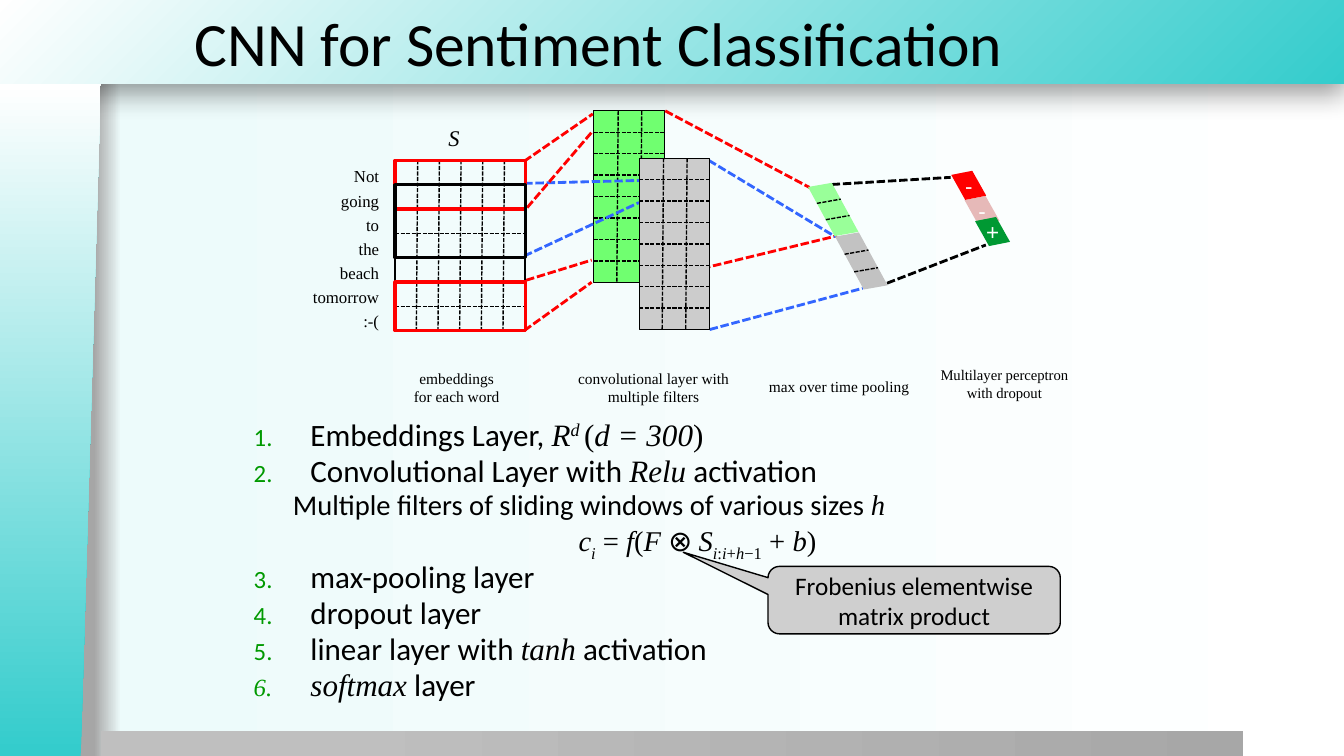
import pptx
import pptx.util
import pptx.dml.color
import pptx.enum.dml
import pptx.enum.shapes
import pptx.enum.text
import pptx.oxml
import pptx.oxml.ns

Pt = pptx.util.Pt
qn = pptx.oxml.ns.qn
MSO = pptx.enum.shapes.MSO_SHAPE
ALIGN = pptx.enum.text.PP_ALIGN
MIDDLE = pptx.enum.text.MSO_ANCHOR.MIDDLE
NS = pptx.oxml.ns.nsdecls("a")

RED, BLUE, BLACK, WHITE = "FF0000", "3366FF", "000000", "FFFFFF"
SERIF, SANS = "Times New Roman", "Calibri"
TITLE = "CNN for Sentiment Classification"
WORDS = ["Not", "going", "to", "the", "beach", "tomorrow", ":-("]
CAPTIONS = [
    (396.7, 259.9, 140.4, 11, ["convolutional layer with", "multiple filters"]),
    (659.5, 257.8, 115.9, 10.5, ["Multilayer perceptron", "with dropout"]),
    (283.7, 259.9, 85, 11, ["embeddings", "for each word"]),
    (537.8, 265.7, 123.1, 11, ["max over time pooling"]),
]
EMBEDDING = (282.2, 114.5, 92.9, 121.7)
FRAMES = [(5, 2, RED), (0, 2, RED), (1, 3, BLACK)]
GREEN_FILTER = (424.1, 79.2, 50.4, 122.4)
GREY_FILTER = (456.5, 113, 50.4, 122.4)
LINKS = [
    (RED, 470.2, 199.4, 597.6, 168.5), (RED, 374.4, 236.2, 422.6, 201.6),
    (BLUE, 374.4, 182.9, 456.5, 144.7), (BLUE, 374.4, 131, 456.5, 128.9),
    (RED, 375.8, 200.2, 422.6, 185.8), (RED, 376.6, 148.3, 423.4, 93.6),
    (RED, 374.4, 115.2, 423.4, 81.4), (RED, 475.2, 79.2, 578.2, 133.9),
    (BLUE, 506.9, 235.4, 616.3, 205.9), (BLUE, 506.2, 114.5, 596.9, 169.2),
    (BLACK, 594, 131.8, 679, 126.7), (BLACK, 633.6, 202.3, 704.2, 175),
]
POOLED = [((596.5, 169), (20.5, 37.8), "C2C2C2"), ((577.2, 133.6), (19, 35), "99FF99")]
POOLED_ACROSS = (17, -3)
OUTPUTS = [((689, 143), "E6B9B8", "-"), ((696.5, 158), "009933", "+"), ((679.5, 125), RED, "-")]
OUTPUT_ACROSS, OUTPUT_DOWN = (15, -3), (10, 17.8)

BODY = [
    ("number", [("Embeddings Layer, ", ""), ("R", "i"), ("d ", "i^"), ("(", "t"), ("d = 300", "i"), (")", "t")]),
    ("number", [("Convolutional Layer with ", ""), ("Relu", "i"), (" activation", "")]),
    ("detail", [("Multiple filters of sliding windows of various sizes ", ""), ("h", "i")]),
    ("formula", [("c", "i"), ("i", "i_"), (" = ", "t"), ("f", "i"), ("(", "t"), ("F ", "i"), ("⊗ ", ""),
                 ("S", "i"), ("i", "i_"), (":", "t_"), ("i", "i_"), ("+", "t_"), ("h", "i_"), ("−1", "t_"),
                 (" + ", "t"), ("b", "i"), (")", "t")]),
    ("number", [("max-pooling layer", "")]),
    ("number", [("dropout layer", "")]),
    ("number", [("linear layer with ", ""), ("tanh", "i"), (" activation", "")]),
    ("number", [("softmax", "i"), (" layer", "")]),
]
PARAGRAPHS = {"number": (22.2, 0, 40.5, -40.5), "detail": (20.4, 1, 28, 0), "formula": (20.4, 1, 36, 0)}
NUMBERING = ["<a:buClr %s><a:srgbClr val='009900'/></a:buClr>", "<a:buSzPct %s val='80000'/>",
             "<a:buFont %s typeface='+mj-lt'/>", "<a:buAutoNum %s type='arabicPeriod'/>"]
CALLOUT = ["Frobenius elementwise", "matrix product"]

prs = pptx.Presentation()
prs.slide_width, prs.slide_height = Pt(960), Pt(540)
s = prs.slides.add_slide(prs.slide_layouts[5])


def rgb(value):
    return pptx.dml.color.RGBColor.from_string(value)


def gradient(fill, root, stops, direction="<a:lin ang='0' scaled='0'/>"):
    fill.gradient()
    grad = next(root.iter(qn("a:gradFill")))
    for child in list(grad):
        grad.remove(child)
    marks = "".join(f"<a:gs pos='{pos * 1000}'><a:srgbClr val='{c}'/></a:gs>" for pos, c in stops)
    for child in pptx.oxml.parse_xml(f"<a:gradFill {NS}><a:gsLst>{marks}</a:gsLst>{direction}</a:gradFill>"):
        grad.append(child)


def style(sp, fill=None, line=None, width=0.75):
    sp.shadow.inherit = False
    if fill:
        sp.fill.solid()
        sp.fill.fore_color.rgb = rgb(fill)
    else:
        sp.fill.background()
    if line:
        sp.line.color.rgb = rgb(line)
        sp.line.width = Pt(width)
    else:
        sp.line.fill.background()
    return sp


def shape(kind, box, *look):
    return style(s.shapes.add_shape(kind, *map(Pt, box)), *look)


def line(x1, y1, x2, y2, color=BLACK, width=1, dashed=True):
    c = s.shapes.add_connector(pptx.enum.shapes.MSO_CONNECTOR.STRAIGHT, *map(Pt, (x1, y1, x2, y2)))
    c.line.color.rgb = rgb(color)
    c.line.width = Pt(width)
    if dashed:
        c.line.dash_style = pptx.enum.dml.MSO_LINE.SQUARE_DOT
    c._element.spPr.append(pptx.oxml.parse_xml(f"<a:effectLst {NS}/>"))


def grid(box, cols, rows):
    x, y, w, h = box
    for i in range(1, cols):
        line(x + w * i / cols + 0.7, y, x + w * i / cols - 0.3, y + h)
    for i in range(1, rows):
        line(x, y + h * i / rows, x + w, y + h * i / rows)


def slab(start, across, down, fill):
    x, y = start
    corners = [(x + across[0], y + across[1]),
               (x + across[0] + down[0], y + across[1] + down[1]),
               (x + down[0], y + down[1])]
    builder = s.shapes.build_freeform(Pt(x), Pt(y))
    builder.add_line_segments([(Pt(a), Pt(b)) for a, b in corners])
    return style(builder.convert_to_shape(), fill)


def add_run(p, text, size, font=SANS, color=BLACK, italic=False):
    r = p.add_run()
    r.text = text
    r.font.size, r.font.name, r.font.italic = Pt(size), font, italic
    r.font.color.rgb = rgb(color)
    return r


def write(tf, lines, size, font, align, spacing=1.0, color=BLACK, italic=False):
    tf.word_wrap = True
    for i, text in enumerate(lines):
        p = tf.add_paragraph() if i else tf.paragraphs[0]
        p.alignment, p.line_spacing = align, spacing
        add_run(p, text, size, font, color, italic)


def textbox(*box):
    tf = s.shapes.add_textbox(*map(Pt, box)).text_frame
    tf.word_wrap = True
    return tf


gradient(s.background.fill, s._element, [(7, "A6A6A6"), (9, "EDFBFB"), (100, WHITE)])
header = shape(MSO.RECTANGLE, (-0.5, 0, 960.5, 60))
gradient(header.fill, header._element, [(0, "34CCCC"), (100, WHITE)],
         "<a:path path='circle'><a:fillToRect l='100000' t='100000'/></a:path>")
header._element.spPr.find(qn("a:effectLst")).append(pptx.oxml.parse_xml(
    f"<a:outerShdw {NS} blurRad='{Pt(20)}' dist='{Pt(6)}' dir='5400000' algn='t' rotWithShape='0'>"
    "<a:srgbClr val='000000'><a:alpha val='40000'/></a:srgbClr></a:outerShdw>"))
footer = shape(MSO.RECTANGLE, (72, 522, 816, 18.5))
gradient(footer.fill, footer._element, [(20, "BFBFBF"), (100, "A7A7A7")])
side = shape(MSO.FLOWCHART_MANUAL_INPUT, (-204.5, 264.2, 481, 72))
side.rotation = 270
side._element.spPr.xfrm.set("flipV", "1")
gradient(side.fill, side._element, [(1, "34CCCC"), (100, WHITE)])

title = s.shapes.title
s.shapes._spTree.append(title._element)
title.left, title.top, title.width, title.height = map(Pt, (131.8, 0, 828.7, 60))
title.text_frame.vertical_anchor = MIDDLE
write(title.text_frame, [TITLE], 44, SANS, ALIGN.LEFT)

shape(MSO.RECTANGLE, GREEN_FILTER, "70FF70", BLACK)
grid(GREEN_FILTER, 3, 8)
for color, *ends in LINKS:
    line(*ends, color, 2)
for start, down, fill in POOLED:
    slab(start, POOLED_ACROSS, down, fill)
    for part in (1 / 3, 2 / 3):
        x, y = start[0] + down[0] * part, start[1] + down[1] * part
        line(x, y, x + POOLED_ACROSS[0], y + POOLED_ACROSS[1])
for start, fill, sign in OUTPUTS:
    tf = slab(start, OUTPUT_ACROSS, OUTPUT_DOWN, fill).text_frame
    tf.margin_left = tf.margin_right = tf.margin_top = tf.margin_bottom = 0
    tf.vertical_anchor = MIDDLE
    write(tf, [sign], 16, "Arial", ALIGN.CENTER, color=WHITE)

shape(MSO.RECTANGLE, EMBEDDING, None, BLACK, 1)
grid(EMBEDDING, 6, len(WORDS))
left, top, width, height = EMBEDDING
row = height / len(WORDS)
for first, count, color in FRAMES:
    shape(MSO.RECTANGLE, (left, top + first * row, width, count * row), None, color, 2.25)
shape(MSO.RECTANGLE, GREY_FILTER, "CCCCCC", BLACK)
grid(GREY_FILTER, 3, 8)

write(textbox(211.7, 112.3, 66.2, 128.2), WORDS, 12, SERIF, ALIGN.RIGHT, 1.2)
write(textbox(313.2, 85, 23.8, 28.8), ["S"], 16, SERIF, ALIGN.LEFT, italic=True)
for x, y, w, size, lines in CAPTIONS:
    write(textbox(x, y, w, 17 * len(lines)), lines, size, SERIF, ALIGN.CENTER)

tf = textbox(174.2, 298.1, 612, 221)
for i, (kind, runs) in enumerate(BODY):
    size, level, margin, indent = PARAGRAPHS[kind]
    p = tf.add_paragraph() if i else tf.paragraphs[0]
    p.level, p.line_spacing, p.space_before = level, 0.8, Pt(size * 0.2)
    p.alignment = ALIGN.CENTER if kind == "formula" else ALIGN.LEFT
    pPr = p._p.get_or_add_pPr()
    pPr.set("marL", str(Pt(margin)))
    pPr.set("indent", str(Pt(indent)))
    if kind == "number":
        for xml in NUMBERING:
            pPr.append(pptx.oxml.parse_xml(xml % NS))
    for text, mark in runs:
        r = add_run(p, text, size, SERIF if mark else SANS, italic="i" in mark)
        if mark[1:]:
            r.font._element.set("baseline", "30000" if mark[1] == "^" else "-25000")

callout = shape(MSO.ROUNDED_RECTANGULAR_CALLOUT, (548.6, 404.6, 208.8, 48.2), "CFCFCF", BLACK, 1)
for i, value in enumerate((-0.79, -0.71, 0.17)):
    callout.adjustments[i] = value
callout.text_frame.vertical_anchor = MIDDLE
write(callout.text_frame, CALLOUT, 18, SANS, ALIGN.CENTER)

prs.save("out.pptx")
